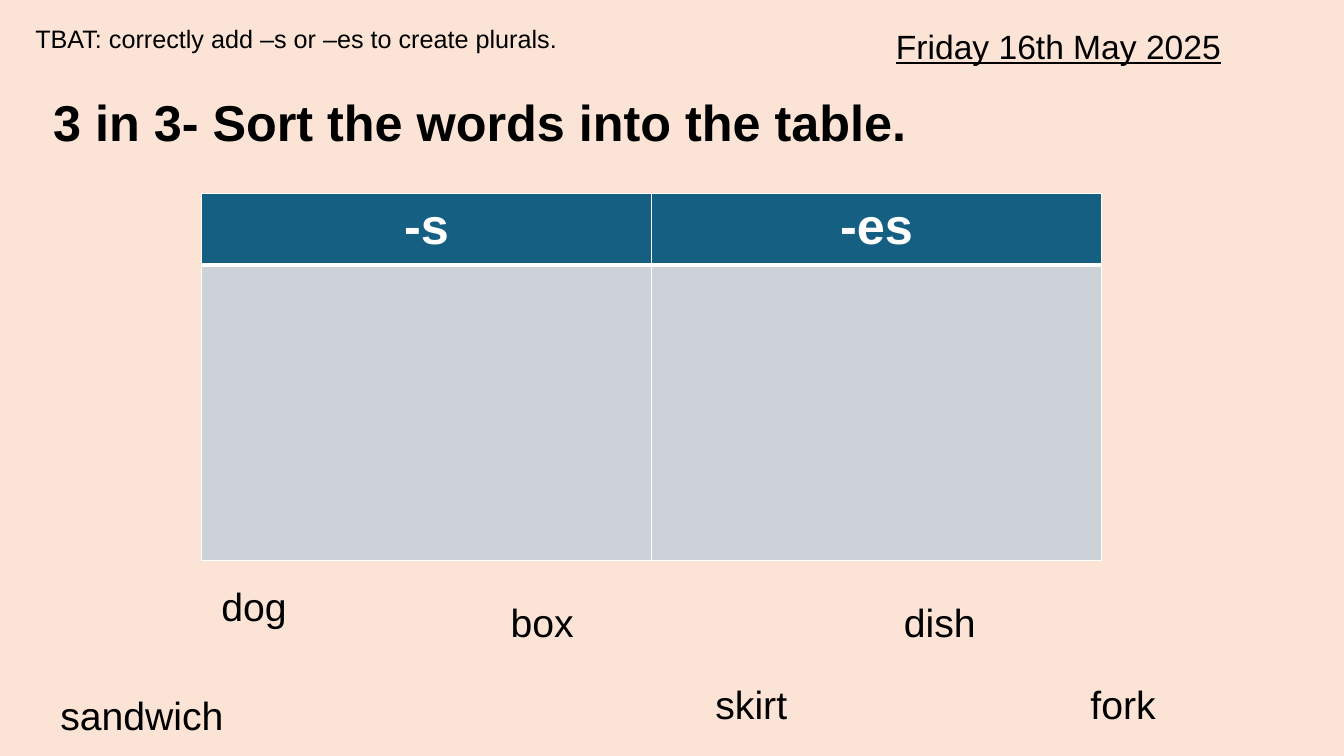
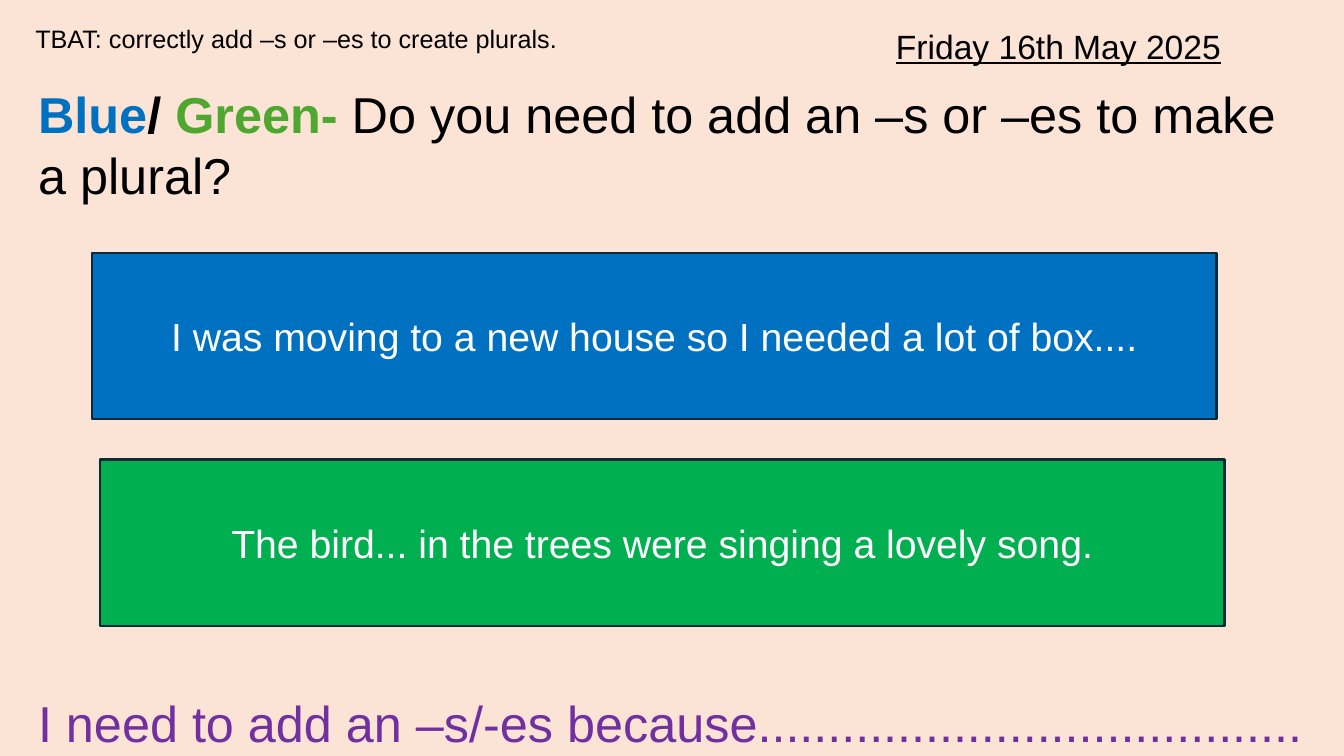
import pptx
import pptx.util
import pptx.dml.color
import pptx.enum.shapes
import pptx.enum.text
import pptx.oxml.ns
from dataclasses import dataclass
from lxml import etree

Cm = pptx.util.Cm
Pt = pptx.util.Pt
RGB = pptx.dml.color.RGBColor.from_string
Align = pptx.enum.text.PP_ALIGN
Anchor = pptx.enum.text.MSO_ANCHOR
Fit = pptx.enum.text.MSO_AUTO_SIZE
qn = pptx.oxml.ns.qn


@dataclass(frozen=True)
class Theme:
    # Colours
    page: str = "FBE3D6"
    ink: str = "000000"
    white: str = "FFFFFF"
    head: str = "156082"
    cell: str = "CCD2D8"
    edge: str = "092A39"
    blue: str = "0070C0"
    green: str = "4EA72E"
    leaf: str = "00B050"
    purple: str = "7030A0"
    # Type
    font: str = "Arial"
    small: int = 18
    date: int = 24
    body: int = 28
    title: int = 36


class Deck:
    def __init__(self, theme):
        self.theme = theme
        self.prs = pptx.Presentation()
        self.prs.slide_width, self.prs.slide_height = Cm(33.87), Cm(19.05)
        self.paint(self.prs.slide_master.background, theme.page)
        self.slide = None

    def paint(self, item, color):
        item.fill.solid()
        item.fill.fore_color.rgb = RGB(color)

    def add_run(self, para, text, size, color=None, **extra):
        run = para.add_run()
        run.text = text
        style = {"name": self.theme.font, "size": Pt(size), **extra}
        for key, value in style.items():
            setattr(run.font, key, value)
        run.font.color.rgb = RGB(color or self.theme.ink)

    def page(self):
        """Start a slide with the shared aim and date."""
        self.slide = self.prs.slides.add_slide(self.prs.slide_layouts[6])
        self.text((0.64, 0.46, 14.27, 1.02), self.theme.small,
                  "TBAT: correctly add –s or –es to create plurals.")
        self.text((22.33, 0.53, 10.82, 1.27), self.theme.date,
                  "Friday 16th May 2025", underline=True)

    def text(self, place, size, *parts, **extra):
        """Each part is a string or a (string, format) pair."""
        box = self.slide.shapes.add_textbox(*map(Cm, place))
        frame = box.text_frame
        frame.word_wrap = True
        frame.auto_size = Fit.SHAPE_TO_FIT_TEXT
        for part in parts:
            words, form = (part, {}) if isinstance(part, str) else part
            self.add_run(frame.paragraphs[0], words, size, **{**extra, **form})

    def bar(self, place, color, words):
        kind = pptx.enum.shapes.MSO_SHAPE.RECTANGLE
        bar = self.slide.shapes.add_shape(kind, *map(Cm, place))
        bar.shadow.inherit = False
        self.paint(bar, color)
        bar.line.color.rgb = RGB(self.theme.edge)
        bar.line.width = Pt(1.5)
        frame = bar.text_frame
        frame.word_wrap = True
        frame.vertical_anchor = Anchor.MIDDLE
        para = frame.paragraphs[0]
        para.alignment = Align.CENTER
        self.add_run(para, words, self.theme.body, self.theme.white)

    def rule(self, cell, side, width):
        props = cell._tc.get_or_add_tcPr()
        line = etree.SubElement(props, qn("a:ln" + side), w=str(Pt(width)))
        fill = etree.SubElement(line, qn("a:solidFill"))
        etree.SubElement(fill, qn("a:srgbClr"), val=self.theme.white)

    def table(self, place, heads, rows):
        """A header row above one empty row to sort words into."""
        grid = self.slide.shapes.add_table(
            len(rows), len(heads), *map(Cm, place)).table
        grid.horz_banding = False
        for row, height in zip(grid.rows, rows):
            row.height = Cm(height)
        looks = ((self.theme.head, {"L": 1, "R": 1, "T": 1, "B": 3}),
                 (self.theme.cell, {"L": 1, "R": 1, "T": 3, "B": 1}))
        for row, (color, sides) in enumerate(looks):
            for col, head in enumerate(heads):
                cell = grid.cell(row, col)
                for side, width in sides.items():
                    self.rule(cell, side, width)
                self.paint(cell, color)
                if row == 0:
                    para = cell.text_frame.paragraphs[0]
                    para.alignment = Align.CENTER
                    self.add_run(para, head, self.theme.title,
                                 self.theme.white, bold=True)


def sort(deck):
    deck.page()
    deck.text((1.09, 2.16, 29.18, 1.8), deck.theme.title,
              "3 in 3- Sort the words into the table.", bold=True)
    deck.table((5.08, 4.88, 22.68, 9.25), ("-s", "-es"), (1.8, 7.45))
    # Words to sort
    words = {"sandwich": (1.27, 17.3), "dish": (22.53, 14.96),
             "box": (12.62, 14.96), "skirt": (17.78, 17.02),
             "dog": (5.33, 14.55), "fork": (27.23, 17.02)}
    for word, spot in words.items():
        deck.text((*spot, 11.35, 1.45), deck.theme.body, word)


def choose(deck):
    theme = deck.theme
    deck.page()
    deck.text((0.71, 1.98, 31.83, 3.33), theme.title,
              ("Blue", {"color": theme.blue, "bold": True}),
              ("/ ", {"bold": True}),
              ("Green- ", {"color": theme.green, "bold": True}),
              "Do you need to add an –s or –es to make a plural?")
    # Sentences to finish
    bars = ((2.31, 6.38, theme.blue,
             "I was moving to a new house so I needed a lot of box...."),
            (2.51, 11.58, theme.leaf,
             "The bird... in the trees were singing a lovely song."))
    for left, top, color, words in bars:
        deck.bar((left, top, 28.35, 4.19), color, words)
    # Answer stem
    deck.text((0.71, 17.32, 34.44, 1.8), theme.title,
              "I need to add an –s/-es because" + "." * 39,
              color=theme.purple)


def main():
    deck = Deck(Theme())
    sort(deck)
    choose(deck)
    deck.prs.save("out.pptx")


if __name__ == "__main__":
    main()
